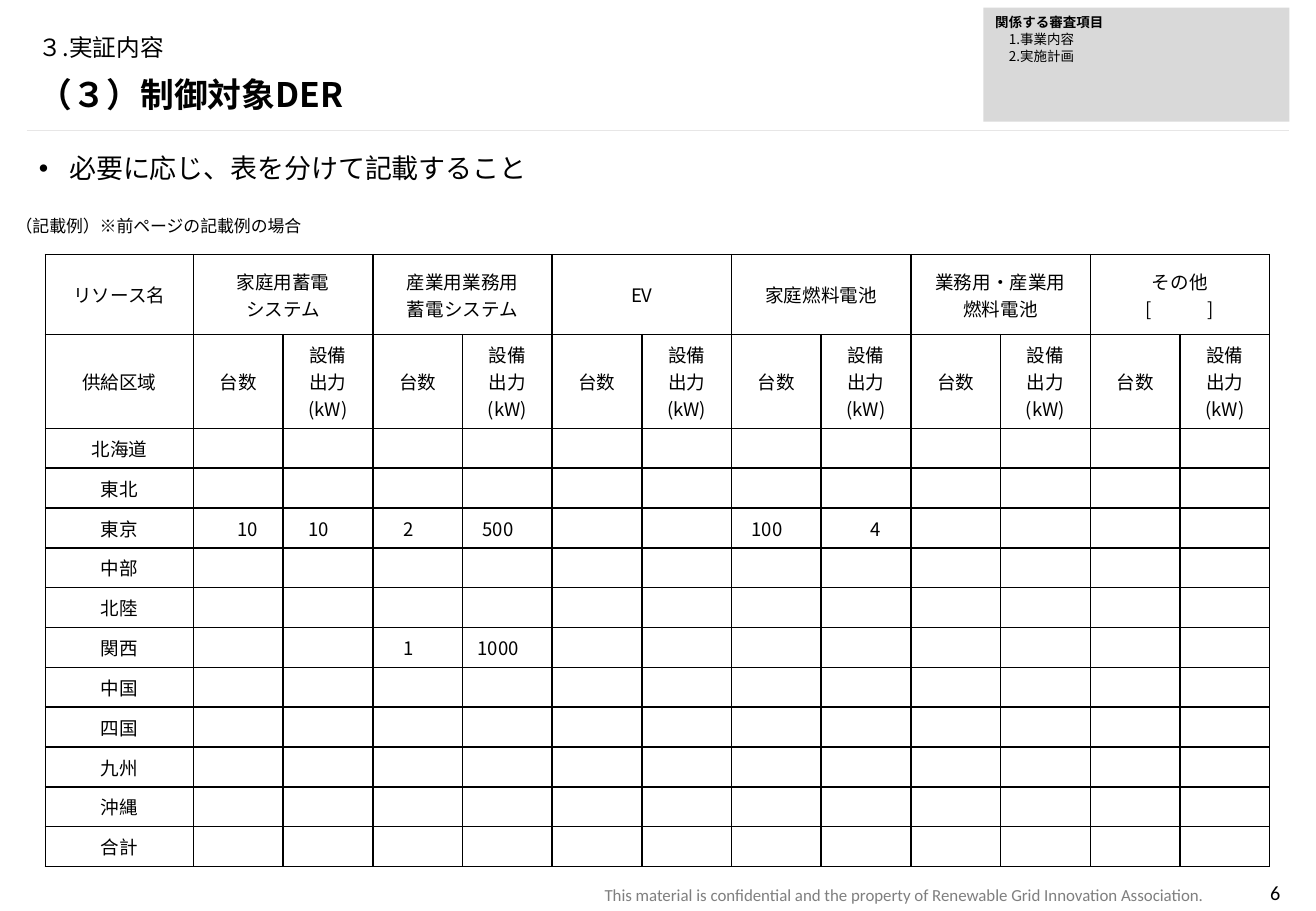
from lxml import etree
from pptx import Presentation
from pptx.dml.color import RGBColor
from pptx.enum.shapes import MSO_CONNECTOR, MSO_SHAPE
from pptx.enum.text import MSO_ANCHOR, PP_ALIGN
from pptx.oxml.ns import qn
from pptx.util import Pt

LEFT, MID, RIGHT = PP_ALIGN.LEFT, PP_ALIGN.CENTER, PP_ALIGN.RIGHT
TOP, CENTER, BASE = MSO_ANCHOR.TOP, MSO_ANCHOR.MIDDLE, MSO_ANCHOR.BOTTOM
RECT, LINE = MSO_SHAPE.RECTANGLE, MSO_CONNECTOR.STRAIGHT
SANS, LATIN = "Noto Sans CJK JP", "Calibri"
COLORS = {"ink": "000000", "muted": "7F7F7F", "rule": "E7E6E6", "panel": "D9D9D9"}

KINDS = ["家庭用蓄電\nシステム", "産業用業務用\n蓄電システム", "EV",
         "家庭燃料電池", "業務用・産業用\n燃料電池", "その他\n[　　　]"]
AREAS = ["北海道", "東北", "東京", "中部", "北陸", "関西",
         "中国", "四国", "九州", "沖縄", "合計"]
VALUES = {
    "東京": {1: "　10", 2: "10　", 3: "2　", 4: "500　", 7: "100　", 8: "　4"},
    "関西": {3: "1　", 4: "1000　"},
}


def rgb(name):
    return RGBColor.from_string(COLORS[name])


def style(frame, size, color="ink", face=SANS, bold=False, align=LEFT, gap=None):
    for para in frame.paragraphs:
        para.alignment = align
        para.line_spacing = gap
        for run in para.runs:
            font = run.font
            font.size, font.bold, font.name = Pt(size), bold, face
            font.color.rgb = rgb(color)
            etree.SubElement(run._r.get_or_add_rPr(), qn("a:ea"), typeface=face)


def add_text(slide, box, text, size, anchor=TOP, **look):
    shape = slide.shapes.add_textbox(*map(Pt, box))
    frame = shape.text_frame
    frame.word_wrap = True
    frame.vertical_anchor = anchor
    frame.text = text
    style(frame, size, **look)
    return frame


def add_bullet(para):
    para.space_before = Pt(10)
    props = para._p.get_or_add_pPr()
    props.set("marL", str(Pt(18)))
    props.set("indent", str(-Pt(18)))
    etree.SubElement(props, qn("a:buFont"), typeface="Arial")
    etree.SubElement(props, qn("a:buChar"), char="•")


def add_rule(slide, left, right, y):
    rule = slide.shapes.add_connector(LINE, Pt(left), Pt(y), Pt(right), Pt(y))
    rule.line.color.rgb = rgb("rule")
    rule.line.width = Pt(0.25)
    etree.SubElement(rule._element.spPr, qn("a:effectLst"))


def add_panel(slide, box, text):
    panel = slide.shapes.add_shape(RECT, *map(Pt, box))
    panel.shadow.inherit = False
    panel.fill.solid()
    panel.fill.fore_color.rgb = rgb("panel")
    panel.line.fill.background()
    frame = panel.text_frame
    frame.word_wrap = True
    frame.vertical_anchor = TOP
    frame.text = text
    style(frame, 8, gap=Pt(10))
    frame.paragraphs[0].runs[0].font.bold = True


def set_cell(cell, text):
    cell.margin_left = cell.margin_right = cell.margin_top = cell.margin_bottom = 0
    cell.vertical_anchor = CENTER
    cell.text_frame.text = text
    style(cell.text_frame, 11, align=MID)
    if not text:
        para = cell.text_frame.paragraphs[0]
        etree.SubElement(para._p, qn("a:endParaRPr"), sz="1100")
    props = cell._tc.get_or_add_tcPr()
    for side in ("lnL", "lnR", "lnT", "lnB"):
        edge = etree.SubElement(props, qn(f"a:{side}"), w=str(Pt(1)))
        fill = etree.SubElement(edge, qn("a:solidFill"))
        etree.SubElement(fill, qn("a:srgbClr"), val=COLORS["ink"])
    cell.fill.background()


def add_grid(slide, box):
    pairs = len(KINDS)
    heads = [["リソース名"] + [part for kind in KINDS for part in (kind, "")],
             ["供給区域"] + ["台数", "設備\v出力\v(kW)"] * pairs]
    body = [[area] + [VALUES.get(area, {}).get(col, "") for col in range(1, 2 * pairs + 1)]
            for area in AREAS]
    rows = heads + body
    grid = slide.shapes.add_table(len(rows), len(rows[0]), *map(Pt, box)).table
    grid.first_row = grid.horz_banding = False
    for col, part in enumerate(grid.columns):
        part.width = Pt(53.15 if col else 87.8)
    for row, part in enumerate(grid.rows):
        part.height = Pt((47.4, 55.6)[row] if row < 2 else 23.62)
    for row, texts in enumerate(rows):
        for col, text in enumerate(texts):
            set_cell(grid.cell(row, col), text)
    for col in range(1, 2 * pairs, 2):
        grid.cell(0, col).merge(grid.cell(0, col + 1))


def main():
    deck = Presentation()
    deck.slide_width, deck.slide_height = Pt(780), Pt(540)
    slide = deck.slides.add_slide(deck.slide_layouts[6])
    add_rule(slide, 16, 764, 77)
    page = add_text(slide, (702, 518.4, 56.9, 21.6), "6", 12, face=LATIN, align=RIGHT)
    page.margin_left = page.margin_right = 0
    add_text(slide, (268, 520.8, 452, 19.2),
             "This material is confidential and the property of "
             "Renewable Grid Innovation Association.",
             10, color="muted", face=LATIN, align=RIGHT)
    note = add_text(slide, (16, 88.5, 749, 420), "必要に応じ、表を分けて記載すること", 16, gap=0.9)
    add_bullet(note.paragraphs[0])
    add_text(slide, (16, 15, 748, 28), "３.実証内容", 14, anchor=CENTER, gap=0.9)
    add_text(slide, (16, 43.4, 749, 28), "（３）制御対象DER", 20, anchor=BASE, bold=True, gap=0.8)
    add_grid(slide, (26.9, 150.9, 725.6, 362.8))
    add_panel(slide, (582.8, 4.5, 181.5, 67.7), "関係する審査項目\n　1.事業内容\n　2.実施計画")
    add_text(slide, (2.2, 124.2, 274.3, 19.4), "（記載例）※前ページの記載例の場合", 10)
    deck.save("out.pptx")


if __name__ == "__main__":
    main()
